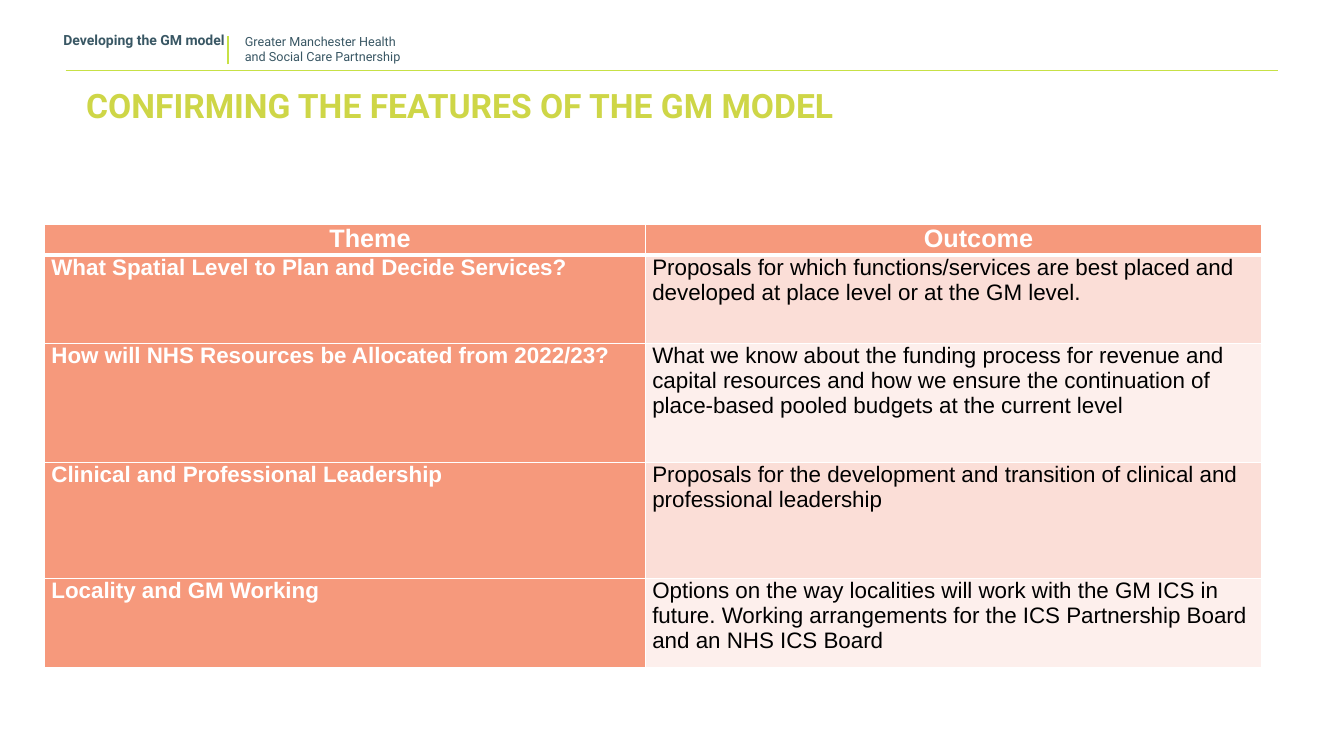
from dataclasses import dataclass

import pptx
import pptx.dml.color
import pptx.enum.shapes
import pptx.enum.text
import pptx.oxml
import pptx.oxml.ns
import pptx.util

EMU_PER_PX = 9144  # 100 px to the inch
ALIGN = pptx.enum.text.PP_ALIGN
ANCHOR = pptx.enum.text.MSO_ANCHOR


@dataclass(frozen=True)
class Theme:
    heading_font: str = "Roboto"
    table_font: str = "Arial"
    lime: str = "CED647"
    rule: str = "C7E146"
    slate: str = "395764"
    white: str = "FFFFFF"
    black: str = "000000"
    coral: str = "F6997C"
    bands: tuple[str, str] = ("FBDED7", "FDEFEC")
    partnership_size: int = 9
    section_size: int = 10
    title_size: int = 24
    header_size: int = 18
    body_size: int = 16


THEME = Theme()


@dataclass(frozen=True)
class TextStyle:
    font: str
    size: int
    color: str
    bold: bool = False
    align: ALIGN = ALIGN.LEFT
    line_spacing: float = 1.0


@dataclass(frozen=True)
class Label:
    left: int
    top: int
    width: int
    height: int
    lines: tuple[str, ...]
    style: TextStyle
    anchor: ANCHOR = ANCHOR.MIDDLE


@dataclass(frozen=True)
class Rule:
    x1: int
    y1: int
    x2: int
    y2: int


@dataclass(frozen=True)
class ThemeRow:
    height: int
    theme: str
    outcome: str


LABELS = (
    Label(233, 29, 349, 40,
          ("Greater Manchester Health", "and Social Care Partnership"),
          TextStyle(THEME.heading_font, THEME.partnership_size, THEME.slate)),
    Label(0, 84, 912, 40, ("CONFIRMING THE FEATURES OF THE GM MODEL",),
          TextStyle(THEME.heading_font, THEME.title_size, THEME.lime, True, ALIGN.CENTER)),
    Label(53, 28, 202, 38, ("Developing the GM model",),
          TextStyle(THEME.heading_font, THEME.section_size, THEME.slate, True,
                    line_spacing=0.9), ANCHOR.TOP),
)
RULES = (Rule(65, 70, 1268, 70), Rule(226, 64, 226, 36))

TABLE_LEFT, TABLE_TOP = 44, 223
COLUMN_WIDTHS = (596, 611)
HEADER_INDENT = 50
ROWS = (
    ThemeRow(29, "Theme", "Outcome"),
    ThemeRow(88, "What Spatial Level to Plan and Decide Services?",
             "Proposals for which functions/services are best placed and "
             "developed at place level or at the GM level."),
    ThemeRow(118, "How will NHS Resources be Allocated from 2022/23?",
             "What we know about the funding process for revenue and capital "
             "resources and how we ensure the continuation of place-based "
             "pooled budgets at the current level"),
    ThemeRow(115, "Clinical and Professional Leadership",
             "Proposals for the development and transition of clinical and "
             "professional leadership"),
    ThemeRow(88, "Locality and GM Working",
             "Options on the way localities will work with the GM ICS in "
             "future. Working arrangements for the ICS Partnership Board "
             "and an NHS ICS Board"),
)
HEADER_STYLE = TextStyle(THEME.table_font, THEME.header_size, THEME.white, True, ALIGN.CENTER)
THEME_STYLE = TextStyle(THEME.table_font, THEME.body_size, THEME.white, True)
OUTCOME_STYLE = TextStyle(THEME.table_font, THEME.body_size, THEME.black)


def px(length: int) -> pptx.util.Emu:
    return pptx.util.Emu(length * EMU_PER_PX)


def rgb(color: str) -> pptx.dml.color.RGBColor:
    return pptx.dml.color.RGBColor.from_string(color)


def style_paragraph(para, style: TextStyle) -> None:
    para.alignment = style.align
    para.line_spacing = style.line_spacing
    para.font.name = style.font
    para.font.size = pptx.util.Pt(style.size)
    para.font.bold = style.bold
    para.font.color.rgb = rgb(style.color)


def add_label(page, label: Label) -> None:
    box = page.shapes.add_textbox(px(label.left), px(label.top),
                                  px(label.width), px(label.height))
    frame = box.text_frame
    frame.word_wrap = True
    frame.vertical_anchor = label.anchor
    frame.text = "\n".join(label.lines)
    for para in frame.paragraphs:
        style_paragraph(para, label.style)


def add_rule(page, rule: Rule) -> None:
    line = page.shapes.add_connector(pptx.enum.shapes.MSO_CONNECTOR.STRAIGHT,
                                     px(rule.x1), px(rule.y1), px(rule.x2), px(rule.y2))
    line.line.color.rgb = rgb(THEME.rule)
    line.line.width = pptx.util.Pt(1)
    line._element.spPr.append(pptx.oxml.parse_xml(
        f"<a:effectLst {pptx.oxml.ns.nsdecls('a')}/>"))


def set_borders(cell, top: int, bottom: int) -> None:
    """Draw white borders; top and bottom widths are in points."""
    properties = cell._tc.get_or_add_tcPr()
    widths = {"lnL": 1, "lnR": 1, "lnT": top, "lnB": bottom}
    for index, (side, width) in enumerate(widths.items()):
        properties.insert(index, pptx.oxml.parse_xml(
            f'<a:{side} {pptx.oxml.ns.nsdecls("a")} w="{pptx.util.Pt(width)}">'
            f'<a:solidFill><a:srgbClr val="{THEME.white}"/></a:solidFill></a:{side}>'))


def fill_cell(cell, text: str, style: TextStyle, fill: str) -> None:
    cell.margin_left = cell.margin_right = px(7)
    cell.margin_top = cell.margin_bottom = 0
    cell.fill.solid()
    cell.fill.fore_color.rgb = rgb(fill)
    cell.text = text
    style_paragraph(cell.text_frame.paragraphs[0], style)


def add_theme_table(page) -> None:
    frame = page.shapes.add_table(len(ROWS), len(COLUMN_WIDTHS), px(TABLE_LEFT), px(TABLE_TOP),
                                  px(sum(COLUMN_WIDTHS)), px(sum(row.height for row in ROWS)))
    table = frame.table
    for column, width in zip(table.columns, COLUMN_WIDTHS):
        column.width = px(width)
    for index, row in enumerate(ROWS):
        table.rows[index].height = px(row.height)
        theme_cell, outcome_cell = table.rows[index].cells
        header = index == 0
        fill_cell(theme_cell, row.theme, HEADER_STYLE if header else THEME_STYLE, THEME.coral)
        fill_cell(outcome_cell, row.outcome, HEADER_STYLE if header else OUTCOME_STYLE,
                  THEME.coral if header else THEME.bands[(index - 1) % 2])
        for cell in (theme_cell, outcome_cell):
            set_borders(cell, top=3 if index == 1 else 1, bottom=3 if header else 1)
            if header:
                para = cell.text_frame.paragraphs[0]
                para._p.get_or_add_pPr().set("marL", str(px(HEADER_INDENT)))


def main() -> None:
    deck = pptx.Presentation()
    deck.slide_width, deck.slide_height = px(1333), px(750)
    page = deck.slides.add_slide(deck.slide_layouts[6])
    for rule in RULES:
        add_rule(page, rule)
    for label in LABELS:
        add_label(page, label)
    add_theme_table(page)
    deck.save("out.pptx")


if __name__ == "__main__":
    main()
